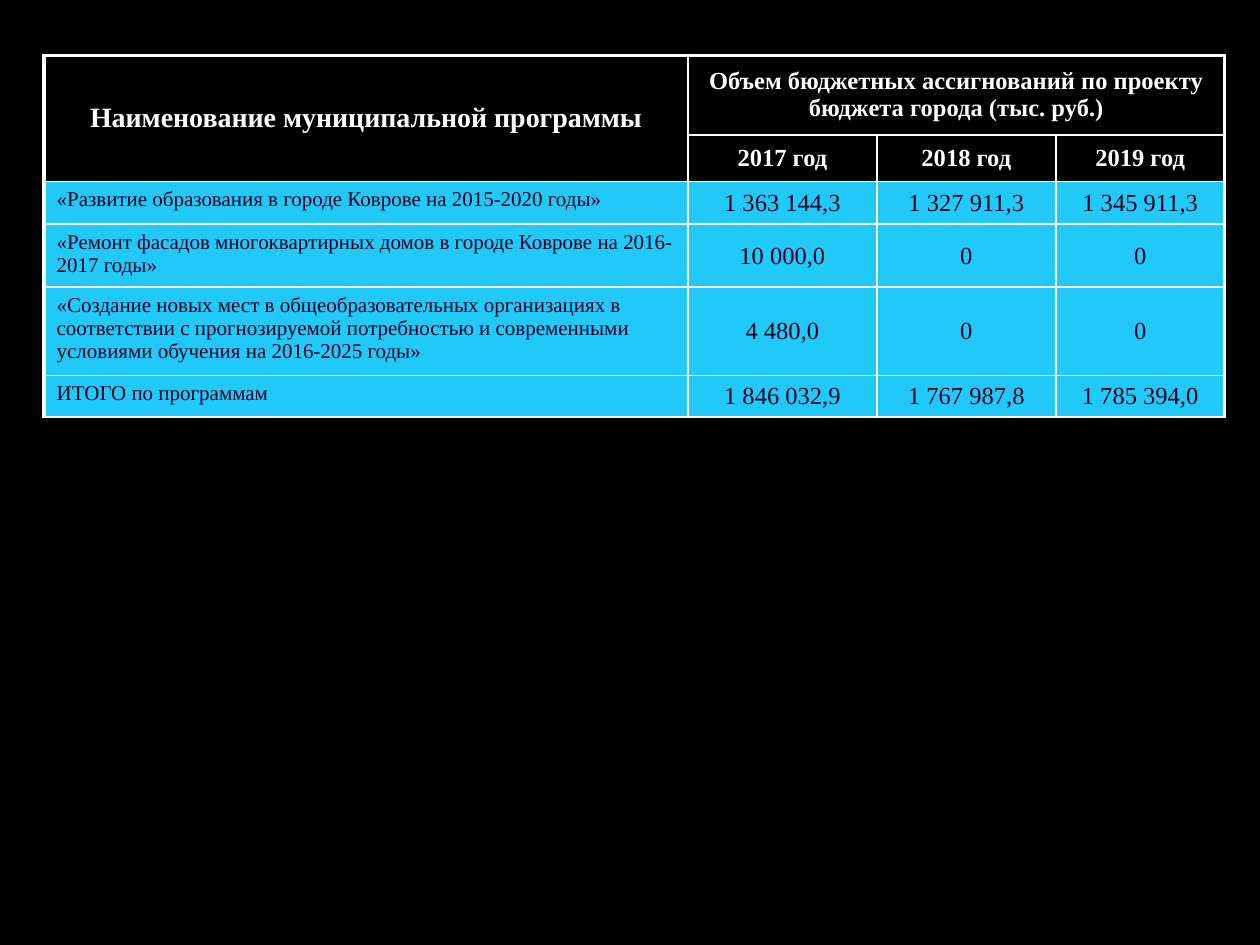
from lxml import etree
from pptx import Presentation
from pptx.dml.color import RGBColor
from pptx.enum.text import MSO_ANCHOR, PP_ALIGN
from pptx.oxml.ns import qn
from pptx.util import Inches, Pt

COLORS = {"back": "000000", "line": "FFFFFF", "head": "FFFFFF",
          "body": "000022", "row": "20C9F8"}
COL_WIDTHS = [5.11, 1.5, 1.42, 1.34]
ROW_HEIGHTS = [0.63, 0.37, 0.34, 0.5, 0.7, 0.33]
HEADER_ROWS = 2
ROWS = [
    ["Наименование муниципальной программы",
     "Объем бюджетных ассигнований по проекту бюджета города (тыс. руб.)", "", ""],
    ["", "2017 год", "2018 год", "2019 год"],
    ["«Развитие образования в городе Коврове на 2015-2020 годы»",
     "1 363 144,3", "1 327 911,3", "1 345 911,3"],
    ["«Ремонт фасадов многоквартирных домов в городе Коврове на 2016-2017 годы»",
     "10 000,0", "0", "0"],
    ["«Создание новых мест в общеобразовательных организациях в соответствии "
     "с прогнозируемой потребностью и современными условиями обучения "
     "на 2016-2025 годы»", "4 480,0", "0", "0"],
    ["ИТОГО по программам", "1 846 032,9", "1 767 987,8", "1 785 394,0"],
]


def rgb(name):
    return RGBColor.from_string(COLORS[name])


class SlideBuilder:
    """Holds the style and the current slide."""

    font = "Times New Roman"
    thin, thick = 1, 2.25

    def __init__(self, prs):
        self.s = prs.slides.add_slide(prs.slide_layouts[6])
        fill = self.s.background.fill
        fill.solid()
        fill.fore_color.rgb = rgb("back")

    def borders(self, cell, widths):
        tcPr = cell._tc.get_or_add_tcPr()
        for side, width in widths.items():
            ln = etree.SubElement(tcPr, qn(f"a:ln{side}"), w=str(Pt(width)))
            fill = etree.SubElement(ln, qn("a:solidFill"))
            etree.SubElement(fill, qn("a:srgbClr"), val=COLORS["line"])

    def text(self, cell, text, size, bold, color, centred):
        cell.vertical_anchor = MSO_ANCHOR.MIDDLE if centred else MSO_ANCHOR.TOP
        p = cell.text_frame.paragraphs[0]
        p.alignment = PP_ALIGN.CENTER if centred else PP_ALIGN.LEFT
        r = p.add_run()
        r.text = text
        for name, value in {"name": self.font, "size": Pt(size), "bold": bold}.items():
            setattr(r.font, name, value)
        r.font.color.rgb = rgb(color)

    def cell(self, cell, text, row, col):
        header = row < HEADER_ROWS
        last_col = col + max(cell.span_width, 1) == len(COL_WIDTHS)
        self.borders(cell, {
            "L": self.thick if col == 0 else self.thin,
            "R": self.thick if last_col else self.thin,
            "T": self.thick if row == 0 else self.thin,
            "B": self.thin,
        })
        if header:
            cell.fill.background()
        else:
            cell.fill.solid()
            cell.fill.fore_color.rgb = rgb("row")
        if text:
            name_size = 16 if header else 12
            self.text(cell, text, name_size if col == 0 else 14, header,
                      "head" if header else "body", header or col > 0)

    def table(self, left, top, rows):
        table = self.s.shapes.add_table(
            len(rows), len(COL_WIDTHS), Inches(left), Inches(top),
            Inches(sum(COL_WIDTHS)), Inches(sum(ROW_HEIGHTS))).table
        table.first_row = table.horz_banding = False
        for column, width in zip(table.columns, COL_WIDTHS):
            column.width = Inches(width)
        for row, height in zip(table.rows, ROW_HEIGHTS):
            row.height = Inches(height)
        table.cell(0, 0).merge(table.cell(1, 0))
        table.cell(0, 1).merge(table.cell(0, 3))
        for i, row in enumerate(rows):
            for j, text in enumerate(row):
                self.cell(table.cell(i, j), text, i, j)


def main():
    prs = Presentation()
    prs.slide_width, prs.slide_height = Inches(10), Inches(7.5)
    SlideBuilder(prs).table(0.35, 0.44, ROWS)
    prs.save("out.pptx")


if __name__ == "__main__":
    main()
